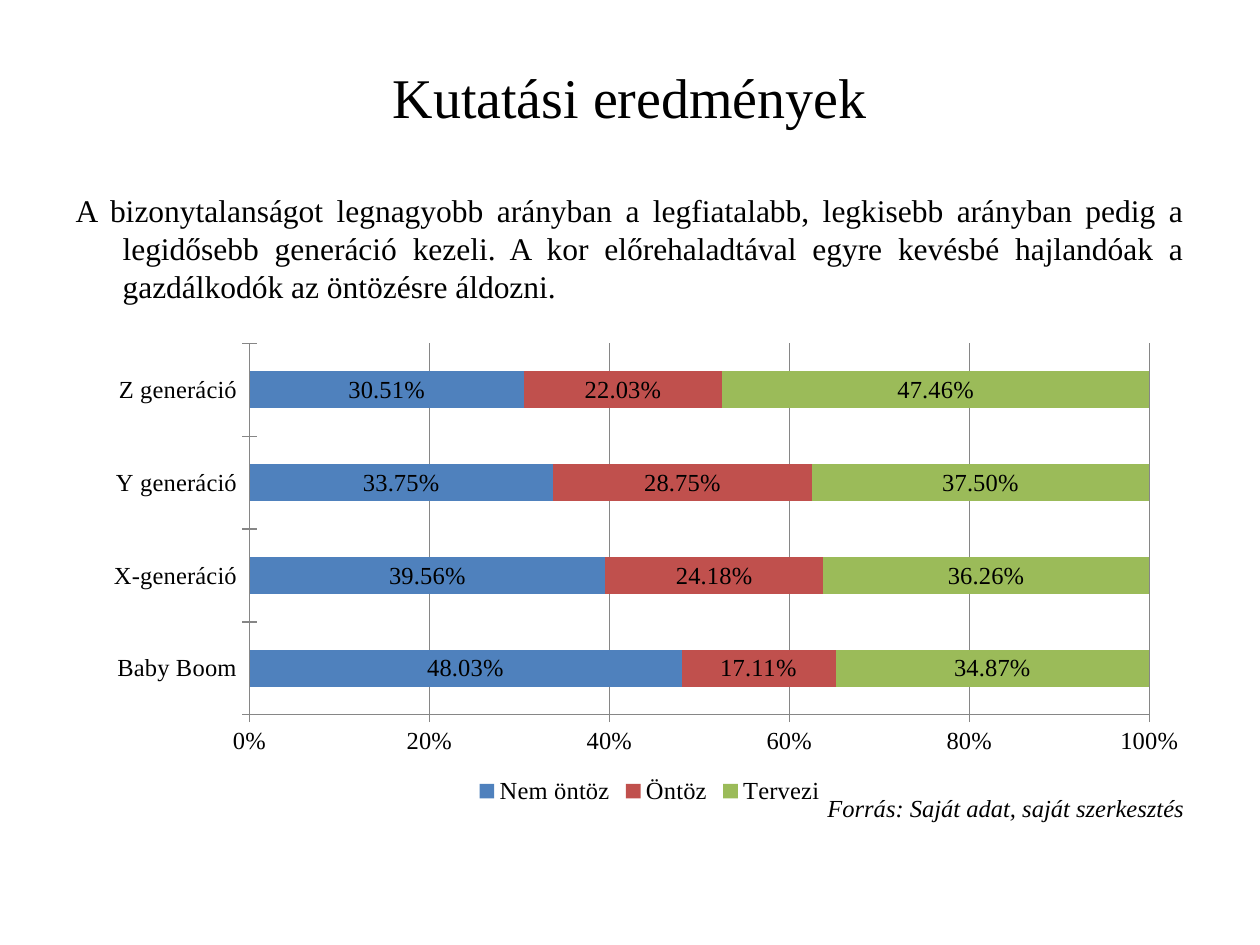
from dataclasses import dataclass

from lxml import etree
from pptx import Presentation
from pptx import util as u
from pptx.chart.data import CategoryChartData
from pptx.dml.color import RGBColor
from pptx.enum import chart as ch, text
from pptx.oxml import ns

PX = 914400 / 126


@dataclass(frozen=True)
class Theme:
    font: str = "Times New Roman"
    ink: str = "000000"
    grid: str = "868686"
    bars: tuple = ("4F81BD", "C0504D", "9BBB59")
    title: int = 32
    body: int = 18
    note: int = 14


THEME = Theme()
GROUPS = ("Baby Boom", "X-generáció", "Y generáció", "Z generáció")
SHARES = {
    "Nem öntöz": (0.4803, 0.3956, 0.3375, 0.3051),
    "Öntöz": (0.1711, 0.2418, 0.2875, 0.2203),
    "Tervezi": (0.3487, 0.3626, 0.375, 0.4746),
}
CLAIM = ("A bizonytalanságot legnagyobb arányban a legfiatalabb, legkisebb "
         "arányban pedig a legidősebb generáció kezeli. A kor előrehaladtával "
         "egyre kevésbé hajlandóak a gazdálkodók az öntözésre áldozni.")
CREDIT = "Forrás: Saját adat, saját szerkesztés"


def px(n):
    return u.Emu(round(n * PX))


def color(code):
    return RGBColor.from_string(code)


def style(font, size):
    font.name = THEME.font
    font.size = u.Pt(size)
    font.color.rgb = color(THEME.ink)


def place(shape, left, top, width, height):
    shape.left, shape.top = px(left), px(top)
    shape.width, shape.height = px(width), px(height)


def write(par, words, size, align, gap=0, hang=0, italic=None):
    par.text = words
    par.alignment = align
    par.space_before = u.Pt(gap)
    props = par._p.get_or_add_pPr()
    props.set("marL", str(px(hang)))
    props.set("indent", str(-px(hang)))
    etree.SubElement(props, ns.qn("a:buNone"))
    for run in par.runs:
        style(run.font, size)
        run.font.italic = italic


def add_title(slide):
    title = slide.shapes.title
    place(title, 63, 38, 1134, 117)
    frame = title.text_frame
    frame.vertical_anchor = text.MSO_ANCHOR.MIDDLE
    write(frame.paragraphs[0], "Kutatási eredmények", THEME.title,
          text.PP_ALIGN.CENTER)


def add_body(slide):
    body = slide.placeholders[1]
    place(body, 63, 185, 1134, 694)
    frame = body.text_frame
    frame.auto_size = text.MSO_AUTO_SIZE.NONE
    write(frame.paragraphs[0], CLAIM, THEME.body, text.PP_ALIGN.JUSTIFY,
          gap=4, hang=47)
    write(frame.add_paragraph(), CREDIT, THEME.note, text.PP_ALIGN.RIGHT,
          gap=279, hang=47, italic=True)


def set_plot(chart, **box):
    area = chart._chartSpace.chart.plotArea
    for old in area.findall(ns.qn("c:layout")):
        area.remove(old)
    layout = etree.Element(ns.qn("c:layout"))
    area.insert(0, layout)
    manual = etree.SubElement(layout, ns.qn("c:manualLayout"))
    parts = {"layoutTarget": "inner", "xMode": "edge", "yMode": "edge", **box}
    for tag, val in parts.items():
        etree.SubElement(manual, ns.qn("c:" + tag)).set("val", str(val))


def set_axis(axis):
    axis.major_tick_mark = ch.XL_TICK_MARK.CROSS
    axis.format.line.color.rgb = color(THEME.grid)
    style(axis.tick_labels.font, THEME.note)


def add_bars(slide):
    data = CategoryChartData(number_format="0.00%")
    data.categories = GROUPS
    for name, vals in SHARES.items():
        data.add_series(name, vals)
    chart = slide.shapes.add_chart(
        ch.XL_CHART_TYPE.BAR_STACKED_100,
        px(94), px(334), px(1111), px(476), data).chart
    style(chart.font, THEME.note)
    chart.has_title = False
    set_plot(chart, x=0.14, y=0.02, w=0.81, h=0.78)

    plot = chart.plots[0]
    plot.gap_width, plot.overlap = 150, 100
    plot.vary_by_categories = False
    for bar, fill in zip(plot.series, THEME.bars):
        bar.format.fill.solid()
        bar.format.fill.fore_color.rgb = color(fill)
        labels = bar.data_labels
        labels.show_value = True
        labels.number_format = "0.00%"
        labels.number_format_is_linked = False
        style(labels.font, THEME.note)

    set_axis(chart.category_axis)
    scale = chart.value_axis
    set_axis(scale)
    scale.minimum_scale, scale.maximum_scale = 0, 1
    scale.major_unit = 0.2
    scale.has_major_gridlines = True
    scale.major_gridlines.format.line.color.rgb = color(THEME.grid)
    scale.tick_labels.number_format = "0%"
    scale.tick_labels.number_format_is_linked = False

    chart.has_legend = True
    chart.legend.position = ch.XL_LEGEND_POSITION.BOTTOM
    chart.legend.include_in_layout = False
    style(chart.legend.font, THEME.note)


def main():
    deck = Presentation()
    deck.slide_width, deck.slide_height = px(1260), px(945)
    slide = deck.slides.add_slide(deck.slide_layouts[1])
    add_title(slide)
    add_body(slide)
    add_bars(slide)
    deck.save("out.pptx")


if __name__ == "__main__":
    main()
